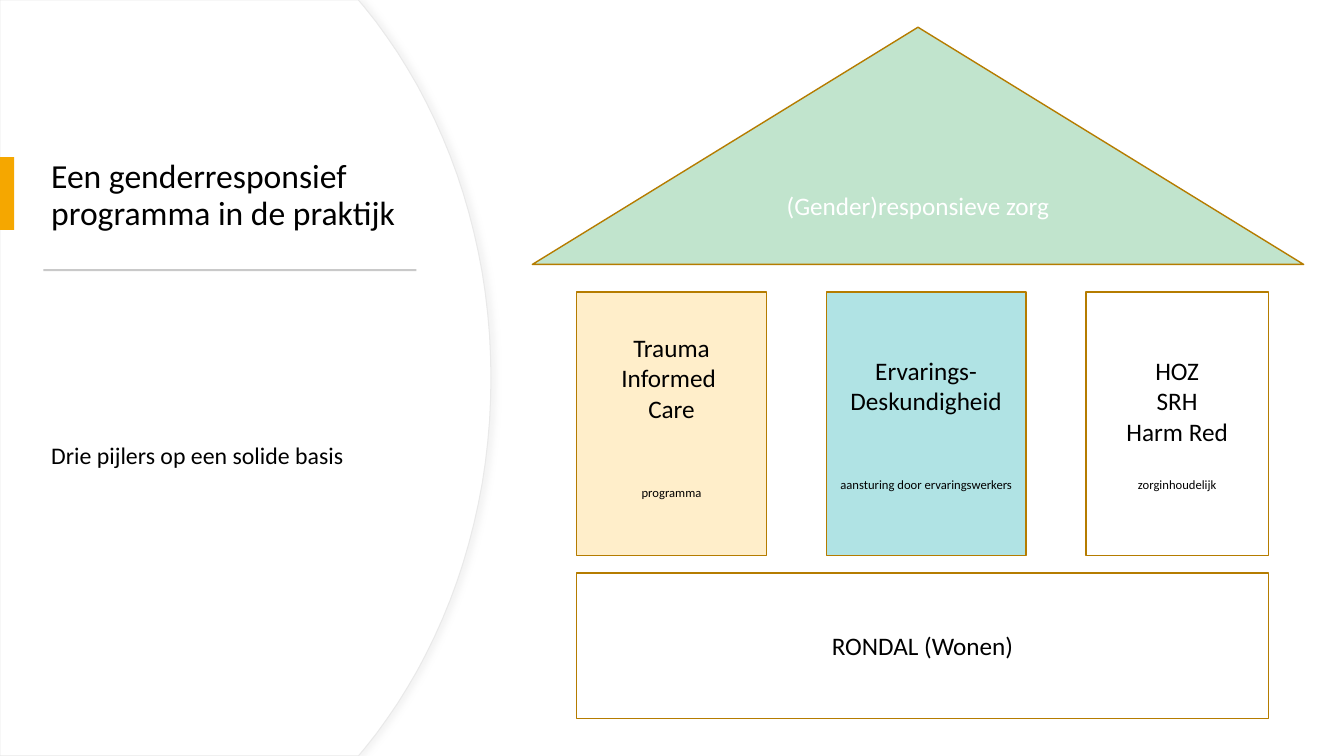
from lxml.etree import SubElement
from pptx import Presentation
from pptx.dml.color import RGBColor
from pptx.enum.shapes import MSO_SHAPE as SHAPE
from pptx.enum.text import MSO_ANCHOR as ANCHOR, PP_ALIGN as ALIGN
from pptx.oxml.ns import qn
from pptx.util import Inches, Pt

WIDTH, HEIGHT = 13.33, 7.5
FONT, BLACK, WHITE, OCHRE = "Calibri", "000000", "FFFFFF", "B57C00"
PILLARS = [
    (1.88, "FFEECA", 100, ["Trauma", "Informed ", "Care"], "programma", 44, 0.2),
    (1.98, "00A5AB", 31, ["Ervarings-", "Deskundigheid"],
     "aansturing door ervaringswerkers", 44, 0.05),
    (1.81, WHITE, 31, ["HOZ", "SRH", "Harm Red"], "zorginhoudelijk", 22, 0.05),
]


def colour(hex_code):
    """Turn a hex string into a colour."""
    return RGBColor.from_string(hex_code)


def paint(shape, fill, line=None, weight=1, opacity=100):
    """Set fill, outline and opacity, without the theme shadow."""
    shape.shadow.inherit = False
    shape.fill.solid()
    shape.fill.fore_color.rgb = colour(fill)
    if opacity < 100:
        tint = shape._element.spPr.find(qn("a:solidFill"))[0]
        SubElement(tint, qn("a:alpha"), val=str(opacity * 1000))
    if line:
        shape.line.color.rgb = colour(line)
        shape.line.width = Pt(weight)
    else:
        shape.line.fill.background()


def block(slide, kind, box, *style, **options):
    """Place a painted preset shape in a box."""
    shape = slide.shapes.add_shape(kind, *map(Inches, box))
    paint(shape, *style, **options)
    return shape


def add_line(paragraph, line, size, ink=BLACK, align=ALIGN.CENTER, spacing=1.0):
    """Fill a paragraph with one styled run."""
    paragraph.alignment = align
    paragraph.line_spacing = spacing
    run = paragraph.add_run()
    run.text = line
    run.font.name, run.font.size = FONT, Pt(size)
    run.font.color.rgb = colour(ink)


def write(frame, lines, size, anchor=ANCHOR.MIDDLE, **style):
    """Write lines as paragraphs of one size."""
    frame.word_wrap = True
    frame.vertical_anchor = anchor
    for index, line in enumerate(lines):
        paragraph = frame.add_paragraph() if index else frame.paragraphs[0]
        add_line(paragraph, line, size, **style)


def text(slide, box, line, size, **options):
    """Place a left-aligned text box."""
    frame = slide.shapes.add_textbox(*map(Inches, box)).text_frame
    write(frame, [line], size, align=ALIGN.LEFT, **options)


def curved_panel(slide, width, height, steps=20):
    """Draw the left panel with its bulging right edge and soft shadow."""
    shoulder = 0.73 * width
    curve = ((0.743 * width, 0.01 * height), (0.901 * width, 0.136 * height),
             (width, 0.309 * height), (width, height / 2))
    upper = []
    for step in range(steps + 1):
        t = step / steps
        weights = ((1 - t) ** 3, 3 * t * (1 - t) ** 2, 3 * t * t * (1 - t), t ** 3)
        upper.append(tuple(sum(w * point[axis] for w, point in zip(weights, curve))
                           for axis in (0, 1)))
    lower = [(x, height - y) for x, y in reversed(upper[:-1])]
    outline = [(shoulder, 0), *upper, *lower, (shoulder, height), (0, height)]
    builder = slide.shapes.build_freeform(0, 0, scale=Inches(1) / 1000)
    builder.add_line_segments([(x * 1000, y * 1000) for x, y in outline], close=True)
    panel = builder.convert_to_shape()
    paint(panel, WHITE, "E9E9E9", 0.75)
    effects = panel._element.spPr.find(qn("a:effectLst"))
    shadow = SubElement(effects, qn("a:outerShdw"), blurRad=str(Pt(4)),
                        dist=str(Pt(3)), dir="0", algn="l", rotWithShape="0")
    tint = SubElement(shadow, qn("a:srgbClr"), val="D9D9D9")
    SubElement(tint, qn("a:alpha"), val="30000")


def heading(slide, left, top, width):
    """Place the title, accent bar, divider and subtitle."""
    text(slide, (left, top, width, 1.35),
         "Een genderresponsief programma in de praktijk", 24, spacing=0.9)
    block(slide, SHAPE.RECTANGLE, (0, top + 0.29, 0.14, 0.72), "F5A700")
    block(slide, SHAPE.RECTANGLE, (left + 0.02, top + 1.4, width - 0.06, 0.02), "C9C9C9")
    text(slide, (left, top + 3.02, width, 2.15),
         "Drie pijlers op een solide basis", 17, anchor=ANCHOR.TOP, spacing=1.1)


def pillars(slide, left, top, width, height):
    """Spread the pillars with equal gaps over the width."""
    gap = (width - sum(pillar[0] for pillar in PILLARS)) / (len(PILLARS) - 1)
    for span, fill, opacity, lines, caption, space, inset in PILLARS:
        pillar = block(slide, SHAPE.RECTANGLE, (left, top, span, height),
                       fill, OCHRE, opacity=opacity)
        frame = pillar.text_frame
        frame.margin_bottom = Inches(inset)
        write(frame, lines, 18)
        note = frame.add_paragraph()
        note.space_before = Pt(space)
        add_line(note, caption, 9)
        left += span + gap


def house(slide, left, top, width, height):
    """Build the house: roof, pillars and base."""
    roof = block(slide, SHAPE.ISOSCELES_TRIANGLE,
                 (left - 0.44, top, width + 0.79, 0.343 * height),
                 "09963B", OCHRE, opacity=25)
    write(roof.text_frame, ["(Gender)responsieve zorg"], 18, ink=WHITE)
    pillars(slide, left, top + 0.383 * height, width, 0.381 * height)
    base = block(slide, SHAPE.RECTANGLE,
                 (left, top + 0.789 * height, width, 0.211 * height),
                 WHITE, OCHRE, opacity=21)
    write(base.text_frame, ["RONDAL (Wonen)"], 18)


def main():
    """Build and save the slide."""
    deck = Presentation()
    deck.slide_width, deck.slide_height = Inches(WIDTH), Inches(HEIGHT)
    slide = deck.slides.add_slide(deck.slide_layouts[6])
    slide.background.fill.solid()
    slide.background.fill.fore_color.rgb = colour(WHITE)
    curved_panel(slide, 4.87, HEIGHT)
    heading(slide, 0.41, 1.27, 3.76)
    house(slide, 5.72, 0.27, 6.86, 6.86)
    deck.save("out.pptx")


if __name__ == "__main__":
    main()
